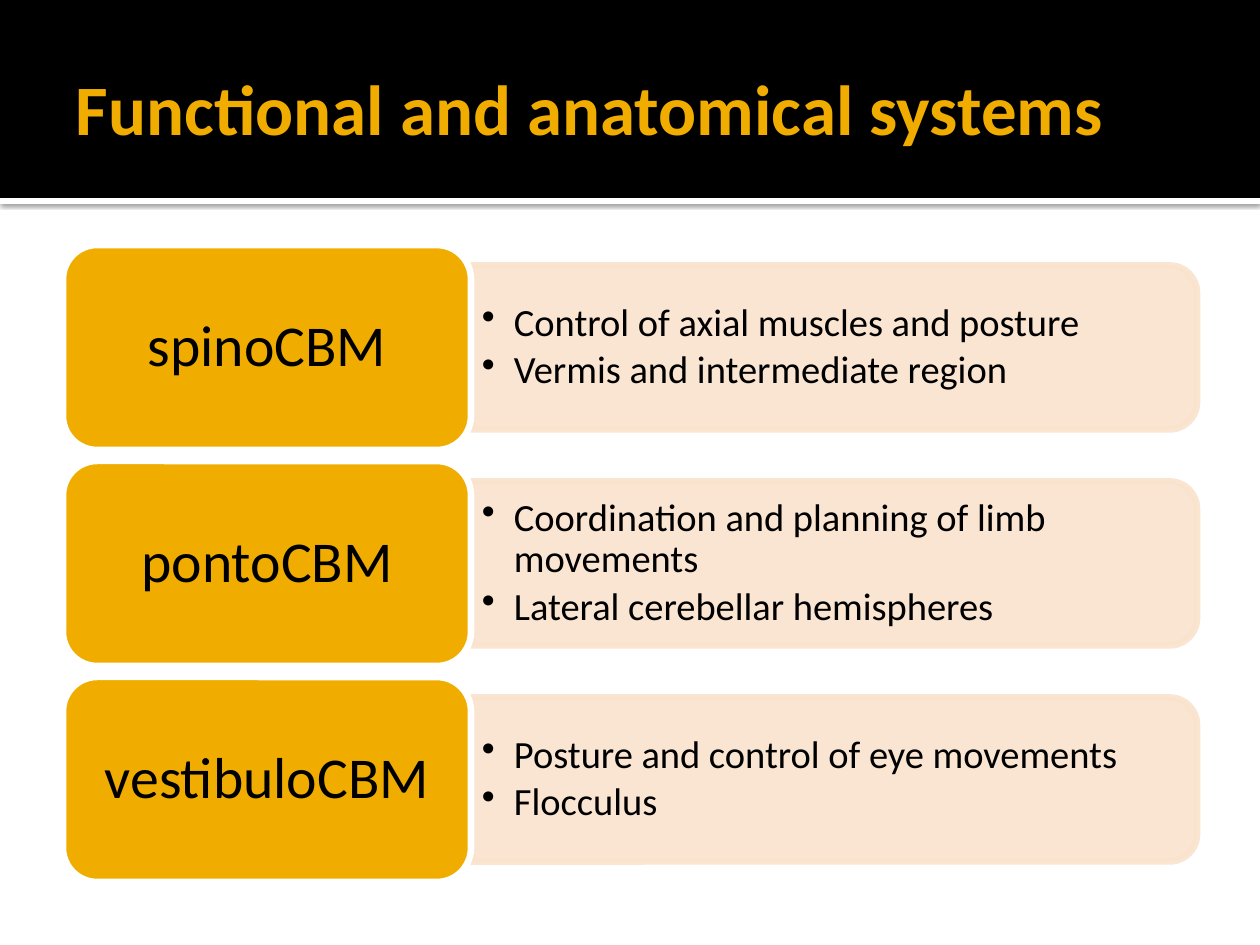
from lxml import etree
from pptx import Presentation, util as u
from pptx.dml.color import RGBColor
from pptx.enum import shapes, text
from pptx.oxml import parse_xml
from pptx.oxml.ns import qn

TITLE = "Functional and anatomical systems"
SYSTEMS = [
    ("spinoCBM", ["Control of axial muscles and posture",
                  "Vermis and intermediate region"]),
    ("pontoCBM", ["Coordination and planning of limb movements",
                  "Lateral cerebellar hemispheres"]),
    ("vestibuloCBM", ["Posture and control of eye movements", "Flocculus"]),
]
GOLD, CREAM, BLACK, WHITE = "F0AD00", "F9E3CC", "000000", "FFFFFF"
FONT = "Calibri"
SLIDE_W, SLIDE_H = 1260, 945
BANNER_H, STRIP_H = 198, 6
LEFT, TOP, PITCH = 63, 245, 216
LABEL_W, LABEL_H = 408, 205
PANEL_W, PANEL_H = 726, 164
BULLETS_W, BULLETS_H = 718, 149
BORDER = 3.78
SHADOW = (
    '<a:effectLst xmlns:a="http://schemas.openxmlformats.org/drawingml/2006/main">'
    '<a:outerShdw blurRad="31750" dist="10160" dir="5400000" algn="tl" rotWithShape="0">'
    '<a:srgbClr val="000000"><a:alpha val="60000"/></a:srgbClr>'
    '</a:outerShdw></a:effectLst>')


def px(length):
    return u.Emu(round(length * 914400 / 126))


def color(hex_code):
    return RGBColor.from_string(hex_code)


def set_alpha(fill, percent):
    for node in fill.iter(qn("a:srgbClr")):
        etree.SubElement(node, qn("a:alpha"), val=str(percent * 1000))


def add_shape(page, kind, left, top, width, height, fill, line=None):
    shape = page.shapes.add_shape(kind, px(left), px(top), px(width), px(height))
    shape.shadow.inherit = False
    shape.fill.solid()
    shape.fill.fore_color.rgb = color(fill)
    if line:
        shape.line.color.rgb = color(line)
        shape.line.width = u.Pt(BORDER)
    else:
        shape.line.fill.background()
    return shape


def add_box(page, left, top, width, height):
    return page.shapes.add_textbox(px(left), px(top), px(width), px(height))


def write(box, lines, size, fill=BLACK, bold=False, align=text.PP_ALIGN.LEFT,
          insets=(11, 6, 11, 6), spacing=1, after=0, bullet_indent=0):
    """Fill a shape with one paragraph per line; insets run left, top, right, bottom."""
    frame = box.text_frame
    frame.word_wrap = True
    frame.vertical_anchor = text.MSO_ANCHOR.MIDDLE
    (frame.margin_left, frame.margin_top,
     frame.margin_right, frame.margin_bottom) = map(px, insets)
    for index, line in enumerate(lines):
        para = frame.add_paragraph() if index else frame.paragraphs[0]
        para.alignment = align
        para.line_spacing = spacing
        para.space_after = u.Pt(after)
        span = para.add_run()
        span.text = line
        font = span.font
        font.name, font.size, font.bold = FONT, u.Pt(size), bold
        font.color.rgb = color(fill)
        if bullet_indent:
            props = para._p.get_or_add_pPr()
            props.set("marL", str(px(bullet_indent)))
            props.set("indent", str(-px(bullet_indent)))
            etree.SubElement(props, qn("a:buChar"), char="•")


def add_panel(page, left, middle):
    """Draw a panel rounded on the right: a top-rounded shape turned by 90 degrees."""
    center = left + PANEL_W / 2
    panel = add_shape(page, shapes.MSO_SHAPE.ROUND_2_SAME_RECTANGLE,
                      center - PANEL_H / 2, middle - PANEL_W / 2,
                      PANEL_H, PANEL_W, CREAM, CREAM)
    panel.rotation = 90
    set_alpha(panel._element.spPr, 90)


def add_system(page, top, name, facts):
    middle = top + LABEL_H / 2
    panel_left = LEFT + LABEL_W
    add_panel(page, panel_left, middle)
    bullets = add_box(page, panel_left, middle - BULLETS_H / 2, BULLETS_W, BULLETS_H)
    write(bullets, facts, 22, spacing=0.9, after=3.5, bullet_indent=32)
    label = add_shape(page, shapes.MSO_SHAPE.ROUNDED_RECTANGLE,
                      LEFT, top, LABEL_W, LABEL_H, GOLD, WHITE)
    write(label, [name], 33, align=text.PP_ALIGN.CENTER,
          insets=(18, 9, 18, 9), spacing=0.9)


def add_header(page):
    rectangle = shapes.MSO_SHAPE.RECTANGLE
    strip = add_shape(page, rectangle, 0, BANNER_H, SLIDE_W, STRIP_H, WHITE)
    props = strip._element.spPr
    props.replace(props.find(qn("a:effectLst")), parse_xml(SHADOW))
    add_shape(page, rectangle, 0, 0, SLIDE_W, BANNER_H, BLACK)
    title = add_box(page, LEFT, 21, SLIDE_W - 2 * LEFT, 173)
    write(title, [TITLE], 40.5, fill=GOLD, bold=True, insets=(13, 6, 6, 6))


def main():
    deck = Presentation()
    deck.slide_width, deck.slide_height = px(SLIDE_W), px(SLIDE_H)
    page = deck.slides.add_slide(deck.slide_layouts[6])
    add_header(page)
    for row, (name, facts) in enumerate(SYSTEMS):
        add_system(page, TOP + row * PITCH, name, facts)
    deck.save("out.pptx")


if __name__ == "__main__":
    main()
